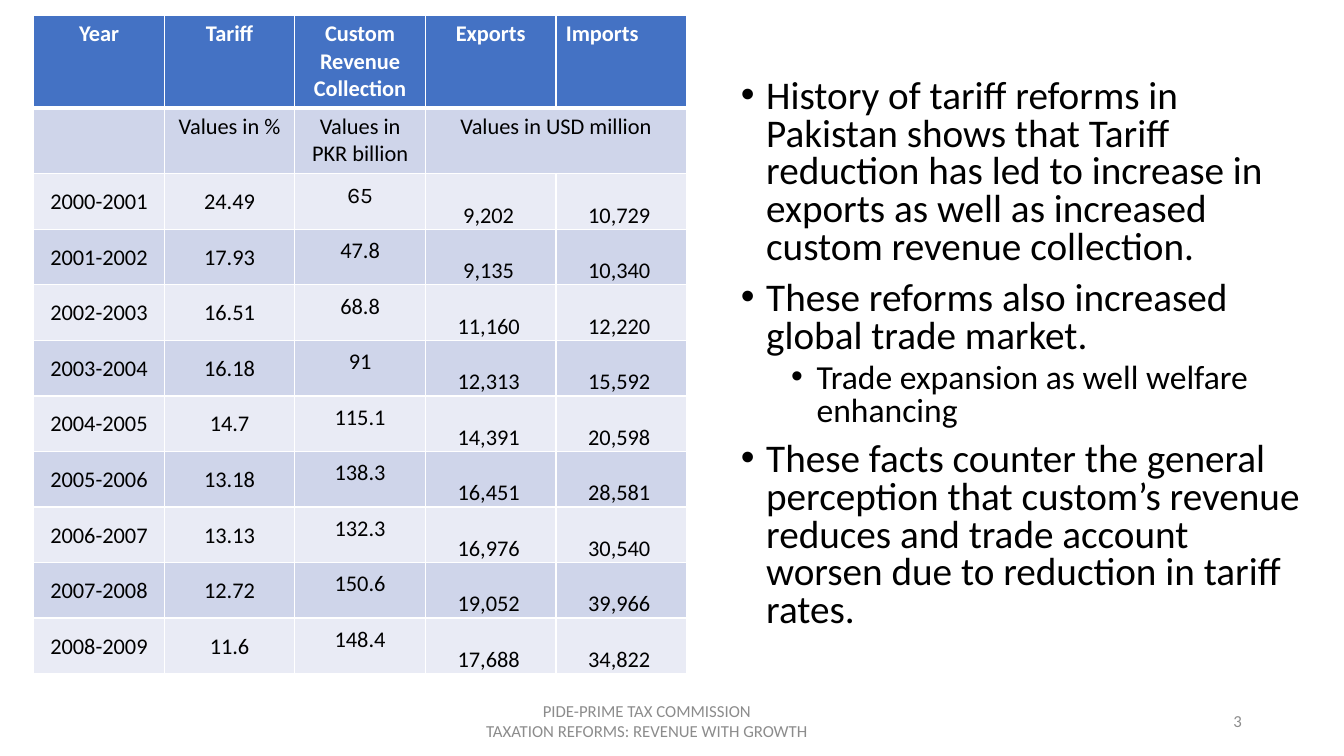
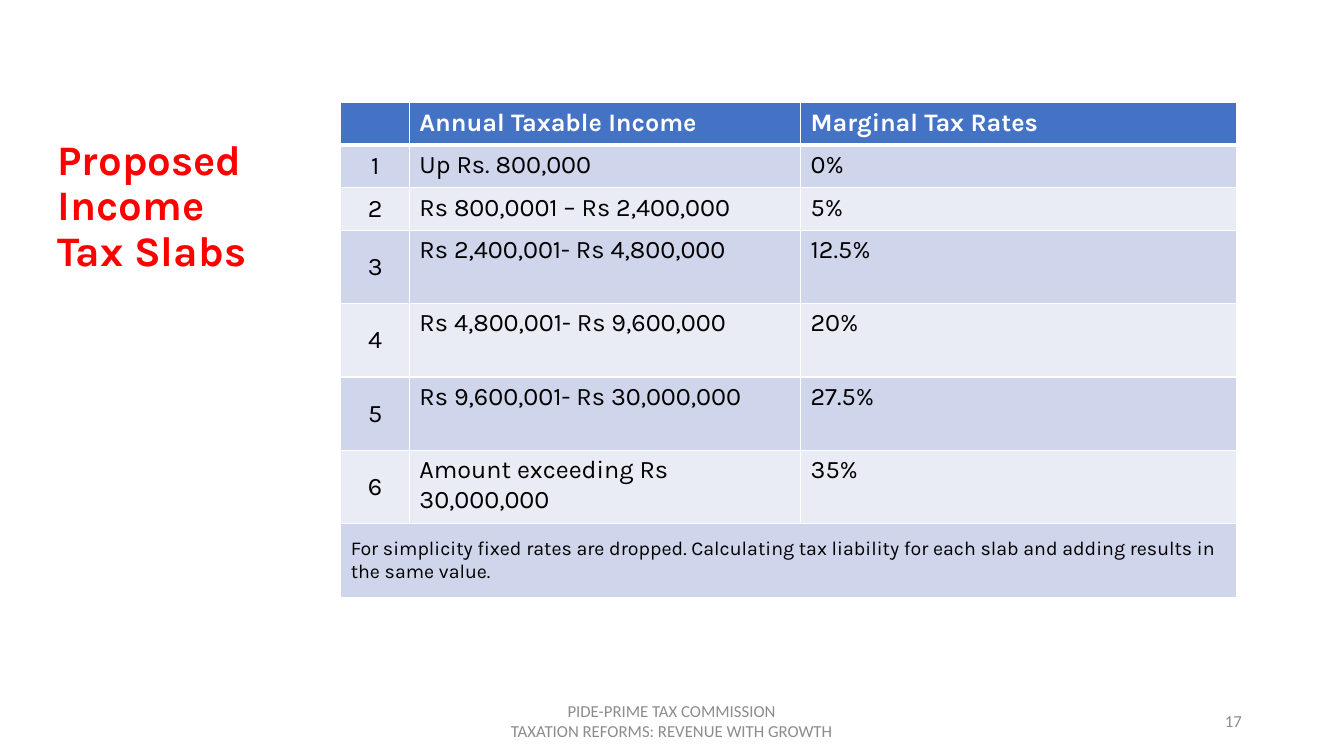
"""Build two tax reform slides: tariff history and proposed income tax slabs."""
from collections.abc import Sequence
from dataclasses import dataclass, field
from typing import Any

from lxml.etree import SubElement
from pptx import Presentation
from pptx.dml.color import RGBColor
from pptx.enum.text import MSO_ANCHOR as Anchor, PP_ALIGN as Align
from pptx.oxml import parse_xml
from pptx.oxml.ns import nsdecls, qn
from pptx.slide import Slide
from pptx.table import Table
from pptx.text.text import TextFrame
from pptx.util import Cm, Length, Pt

COLORS = {
    "text": "000000",
    "white": "FFFFFF",
    "footer": "8C8C8C",
    "title": "FF0000",
    "header": "4472C4",
    "band_dark": "CFD5EA",
    "band_light": "E9EBF5",
}
FOOTER_LINES = ("PIDE-PRIME TAX COMMISSION", "TAXATION REFORMS: REVENUE WITH GROWTH")

TARIFF_HEADER = ("Year", "Tariff", "Custom Revenue Collection", "Exports", "Imports")
TARIFF_UNITS = ("", "Values in %", "Values in PKR billion", "Values in USD million", "")
TARIFF_ROWS = (
    ("2000-2001", "24.49", "65", "9,202", "10,729"),
    ("2001-2002", "17.93", "47.8", "9,135", "10,340"),
    ("2002-2003", "16.51", "68.8", "11,160", "12,220"),
    ("2003-2004", "16.18", "91", "12,313", "15,592"),
    ("2004-2005", "14.7", "115.1", "14,391", "20,598"),
    ("2005-2006", "13.18", "138.3", "16,451", "28,581"),
    ("2006-2007", "13.13", "132.3", "16,976", "30,540"),
    ("2007-2008", "12.72", "150.6", "19,052", "39,966"),
    ("2008-2009", "11.6", "148.4", "17,688", "34,822"),
)

SLAB_HEADER = ("", "Annual Taxable Income", "Marginal Tax Rates")
SLAB_ROWS = (
    ("1", "Up Rs. 800,000", "0%"),
    ("2", "Rs 800,0001 – Rs 2,400,000", "5%"),
    ("3", "Rs 2,400,001- Rs 4,800,000", "12.5%"),
    ("4", "Rs 4,800,001- Rs 9,600,000", "20%"),
    ("5", "Rs 9,600,001- Rs 30,000,000", "27.5%"),
    ("6", "Amount exceeding Rs 30,000,000", "35%"),
)
SLAB_NOTE = (
    "For simplicity fixed rates are dropped. Calculating tax liability for each slab "
    "and adding results in the same value."
)


@dataclass(frozen=True)
class Finding:
    """A bulleted statement and its outline level."""

    text: str
    level: int = 0


@dataclass(frozen=True)
class CellStyle:
    """Placement and text format of a table cell; insets are left, top, right, bottom."""

    anchor: Anchor = Anchor.TOP
    insets: tuple[float, float, float, float] = (0.25, 0.13, 0.25, 0.13)
    text: dict[str, Any] = field(default_factory=dict)


FINDINGS = (
    Finding(
        "History of tariff reforms in Pakistan shows that Tariff reduction has led to "
        "increase in exports as well as increased custom revenue collection."
    ),
    Finding("These reforms also increased global trade market."),
    Finding("Trade expansion as well welfare enhancing", level=1),
    Finding(
        "These facts counter the general perception that custom’s revenue reduces and "
        "trade account worsen due to reduction in tariff rates."
    ),
)


def write(
    frame: TextFrame,
    text: str,
    *,
    font: str = "Calibri",
    size: float = 12,
    color: str = "text",
    bold: bool = False,
    align: Align = Align.LEFT,
    line: float | Length = 1.0,
    before: float = 0,
    after: float = 0,
    bullet_at: float | None = None,
) -> None:
    """Add one formatted paragraph, using the first one while it is empty."""
    first = frame.paragraphs[0]
    paragraph = frame.add_paragraph() if first.runs else first
    paragraph.alignment = align
    paragraph.line_spacing = line
    paragraph.space_before, paragraph.space_after = Pt(before), Pt(after)
    run = paragraph.add_run()
    run.text = text
    run.font.name, run.font.size, run.font.bold = font, Pt(size), bold
    run.font.color.rgb = RGBColor.from_string(COLORS[color])
    if bullet_at is not None:
        hanging = Cm(0.64)
        properties = paragraph._p.get_or_add_pPr()
        properties.set("marL", str(Cm(bullet_at) + hanging))
        properties.set("indent", str(-hanging))
        SubElement(properties, qn("a:buFont")).set("typeface", "Arial")
        SubElement(properties, qn("a:buChar")).set("char", "•")


def add_text_area(
    slide: Slide, left: float, top: float, width: float, height: float, anchor: Anchor
) -> TextFrame:
    """Add a wrapping text box and return its frame."""
    frame = slide.shapes.add_textbox(Cm(left), Cm(top), Cm(width), Cm(height)).text_frame
    frame.word_wrap = True
    frame.vertical_anchor = anchor
    return frame


def draw_footer(slide: Slide, left: float, width: float, number: int) -> None:
    """Draw the commission footer and the slide number."""
    top, height = 17.65, 1.02
    commission = add_text_area(slide, left, top, width, height, Anchor.MIDDLE)
    for text in FOOTER_LINES:
        write(commission, text, color="footer", align=Align.CENTER)
    page = add_text_area(slide, 23.93, top, 7.62, height, Anchor.MIDDLE)
    write(page, str(number), color="footer", align=Align.RIGHT)


def draw_grid(
    slide: Slide, left: float, top: float, widths: Sequence[float], heights: Sequence[float]
) -> Table:
    """Draw an empty banded table with white rules, heavier under the header."""
    table = slide.shapes.add_table(
        len(heights), len(widths), Cm(left), Cm(top), Cm(sum(widths)), Cm(sum(heights))
    ).table
    for column, width in zip(table.columns, widths):
        column.width = Cm(width)
    for index, (row, height) in enumerate(zip(table.rows, heights)):
        row.height = Cm(height)
        band = "header" if index == 0 else ("band_light", "band_dark")[index % 2]
        rules = {"lnL": 1, "lnR": 1, "lnT": 3 if index == 1 else 1, "lnB": 1 if index else 3}
        for cell in row.cells:
            cell.fill.solid()
            cell.fill.fore_color.rgb = RGBColor.from_string(COLORS[band])
            for place, (side, points) in enumerate(rules.items()):
                rule = parse_xml(
                    f'<a:{side} {nsdecls("a")} w="{Pt(points)}"><a:solidFill>'
                    f'<a:srgbClr val="{COLORS["white"]}"/></a:solidFill></a:{side}>'
                )
                cell._tc.get_or_add_tcPr().insert(place, rule)
    return table


def fill_row(
    table: Table, row: int, texts: Sequence[str], styles: Sequence[CellStyle], **shared: Any
) -> None:
    """Write the texts of one row, each in the style of its column."""
    for column, (text, style) in enumerate(zip(texts, styles)):
        if not text:
            continue
        cell = table.cell(row, column)
        cell.vertical_anchor = style.anchor
        cell.margin_left, cell.margin_top, cell.margin_right, cell.margin_bottom = map(
            Cm, style.insets
        )
        write(cell.text_frame, text, **{**shared, **style.text})


def build_tariff_slide(slide: Slide) -> None:
    """Draw the tariff history table and its findings."""
    centred = {"align": Align.CENTER}
    heading = CellStyle(text=centred)
    plain = CellStyle(Anchor.MIDDLE, (0.03, 0.03, 0.03, 0), centred)
    revenue = CellStyle(
        Anchor.MIDDLE,
        (0.1, 0, 0.1, 0),
        {**centred, "line": Pt(10.8), "before": 4.5, "after": 2.7},
    )
    trade = CellStyle(Anchor.MIDDLE, (0.03, 0.7, 0.13, 0), centred)

    table = draw_grid(slide, 0.85, 0.39, [3.29] * 5, [2.29, 1.66] + [1.4] * len(TARIFF_ROWS))
    fill_row(
        table, 0, TARIFF_HEADER, [heading] * 4 + [CellStyle()], size=16, color="white", bold=True
    )
    table.cell(1, 3).merge(table.cell(1, 4))
    fill_row(table, 1, TARIFF_UNITS, [heading] * 5, size=16)
    for row, texts in enumerate(TARIFF_ROWS, start=2):
        fill_row(table, row, texts, (plain, plain, revenue, trade, trade), size=16)
    table.cell(2, 2).text_frame.paragraphs[0].runs[0].font.name = "Karla"

    draw_footer(slide, 10.59, 11.43, 3)
    findings = add_text_area(slide, 18.42, 1.88, 14.6, 15.27, Anchor.TOP)
    for finding in FINDINGS:
        write(
            findings,
            finding.text,
            size=28 - 4 * finding.level,
            line=0.8,
            before=5 if finding.level else 10,
            bullet_at=1.27 * finding.level,
        )


def build_slab_slide(slide: Slide) -> None:
    """Draw the title and the table of proposed tax slabs."""
    title = add_text_area(slide, 1.2, 4.39, 6, 2.67, Anchor.BOTTOM)
    write(
        title, "Proposed Income Tax Slabs", font="Karla", size=30, color="title", bold=True, line=0.9
    )
    draw_footer(slide, 12.09, 9.68, 17)

    plain = CellStyle()
    ordinal = CellStyle(Anchor.MIDDLE, text={"align": Align.CENTER})
    note = CellStyle(Anchor.MIDDLE, text={"size": 14})
    table = draw_grid(slide, 8.59, 2.59, (1.73, 9.86, 10.98), [1.07] * 3 + [1.85] * 5)
    fill_row(
        table, 0, SLAB_HEADER, [plain] * 3, font="Karla", size=18, color="white", bold=True
    )
    for row, texts in enumerate(SLAB_ROWS, start=1):
        fill_row(table, row, texts, (ordinal, plain, plain), font="Karla", size=18)
    last = len(SLAB_ROWS) + 1
    table.cell(last, 0).merge(table.cell(last, 2))
    fill_row(table, last, [SLAB_NOTE], [note], font="Karla")


def main() -> None:
    """Build and save the presentation."""
    deck = Presentation()
    deck.slide_width, deck.slide_height = Cm(33.87), Cm(19.05)
    blank = deck.slide_layouts[6]
    for build in (build_tariff_slide, build_slab_slide):
        build(deck.slides.add_slide(blank))
    deck.save("out.pptx")


if __name__ == "__main__":
    main()
